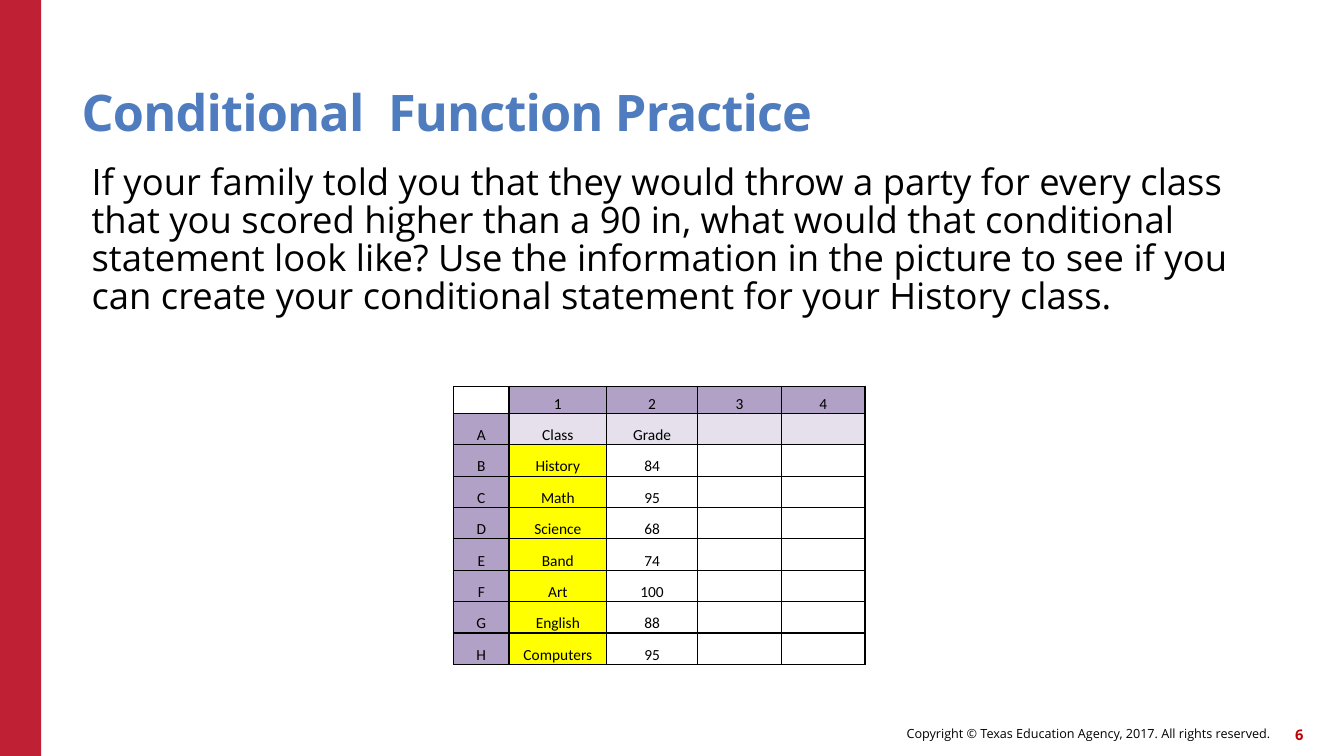
from dataclasses import dataclass

from lxml.etree import SubElement
from pptx import Presentation
from pptx.dml.color import RGBColor
from pptx.enum.shapes import MSO_SHAPE
from pptx.enum.text import MSO_ANCHOR, MSO_AUTO_SIZE, PP_ALIGN
from pptx.oxml import parse_xml
from pptx.oxml.ns import nsdecls, qn
from pptx.slide import Slide
from pptx.table import _Cell
from pptx.text.text import TextFrame
from pptx.util import Cm, Pt


@dataclass(frozen=True)
class Theme:
    font: str = "Open Sans"
    grid_font: str = "Calibri"
    black: str = "000000"
    red: str = "C02033"
    dark_red: str = "C00000"
    blue: str = "4E7CBE"
    purple: str = "B2A1C7"
    pale: str = "E5E0EC"
    yellow: str = "FFFF00"
    title: float = 36
    body: float = 26
    cell: float = 11
    number: float = 10.5
    note: float = 9


@dataclass(frozen=True)
class Box:
    left: float
    top: float
    width: float
    height: float

    def place(self) -> tuple[Cm, Cm, Cm, Cm]:
        return Cm(self.left), Cm(self.top), Cm(self.width), Cm(self.height)


@dataclass(frozen=True)
class Label:
    text: str
    box: Box
    size: float
    color: str = "000000"
    bold: bool = False
    align: PP_ALIGN = PP_ALIGN.RIGHT
    anchor: MSO_ANCHOR = MSO_ANCHOR.MIDDLE
    inset: tuple[float, float] = (0, 0)
    line: float = 1


THEME = Theme()
BAR = Box(0, 0, 1.04, 19.05)
TITLE = Box(2.06, 1.14, 27.94, 2.44)
GRID = Box(11.43, 9.73, 10.37, 6.99)
WIDTHS = (1.4, 2.46, 2.29, 2.11, 2.11)
HEAD, ROW = 0.69, 0.79
GRADES = (
    ("Class", "Grade"), ("History", "84"), ("Math", "95"),
    ("Science", "68"), ("Band", "74"), ("Art", "100"),
    ("English", "88"), ("Computers", "95"),
)
LABELS = (
    Label("If your family told you that they would throw a party for every class "
          "that you scored higher than a 90 in, what would that conditional "
          "statement look like? Use the information in the picture to see if you "
          "can create your conditional statement for your History class.",
          Box(2.06, 3.94, 30.71, 13.16), THEME.body, align=PP_ALIGN.LEFT,
          anchor=MSO_ANCHOR.TOP, inset=(0.25, 0.23), line=0.87),
    Label("Copyright © Texas Education Agency, 2017. All rights reserved.",
          Box(15.6, 18.08, 16.41, 0.81), THEME.note),
    Label("6", Box(31.78, 18.11, 1.07, 0.81), THEME.number, THEME.dark_red, True),
)


def write(frame: TextFrame, text: str, *, size: float, color: str = THEME.black,
          font: str = THEME.font, bold: bool = False,
          align: PP_ALIGN = PP_ALIGN.LEFT, line: float = 1,
          track: float = 0) -> None:
    para = frame.paragraphs[0]
    para.alignment = align
    para.line_spacing = line
    if not text:
        SubElement(para._p, qn("a:endParaRPr"), sz=str(int(size * 100)))
        return
    run = para.add_run()
    run.text = text
    run.font.name = font
    run.font.size = Pt(size)
    run.font.bold = bold
    run.font.color.rgb = RGBColor.from_string(color)
    if track:
        run._r.get_or_add_rPr().set("spc", str(round(track * 100)))


def inset(frame: TextFrame, side: float, top: float) -> None:
    frame.margin_left = frame.margin_right = Cm(side)
    frame.margin_top = frame.margin_bottom = Cm(top)


def add_bar(slide: Slide) -> None:
    bar = slide.shapes.add_shape(MSO_SHAPE.RECTANGLE, *BAR.place())
    bar.shadow.inherit = False
    bar.fill.solid()
    bar.fill.fore_color.rgb = RGBColor.from_string(THEME.red)
    bar.line.fill.background()


def add_title(slide: Slide) -> None:
    title = slide.shapes.title
    title.left, title.top, title.width, title.height = TITLE.place()
    frame = title.text_frame
    frame.auto_size = MSO_AUTO_SIZE.NONE
    frame.word_wrap = True
    frame.vertical_anchor = MSO_ANCHOR.BOTTOM
    inset(frame, 0, 0)
    write(frame, "Conditional  Function Practice", size=THEME.title,
          color=THEME.blue, bold=True, line=0.9, track=-0.6)


def add_label(slide: Slide, label: Label) -> None:
    frame = slide.shapes.add_textbox(*label.box.place()).text_frame
    frame.word_wrap = True
    frame.vertical_anchor = label.anchor
    inset(frame, *label.inset)
    write(frame, label.text, size=label.size, color=label.color,
          bold=label.bold, align=label.align, line=label.line)


def shade(row: int, col: int) -> str | None:
    """Return the fill of a cell, or None where it is clear."""
    if row == 0 or col == 0:
        return THEME.purple if row or col else None
    if row == 1:
        return THEME.pale
    return THEME.yellow if col == 1 else None


def edge(cell: _Cell) -> None:
    """Draw a thin black line on all four sides."""
    props = cell._tc.get_or_add_tcPr()
    for spot, side in enumerate(("lnL", "lnR", "lnT", "lnB")):
        props.insert(spot, parse_xml(
            f'<a:{side} {nsdecls("a")} w="{Pt(1)}"><a:solidFill>'
            f'<a:srgbClr val="{THEME.black}"/></a:solidFill></a:{side}>'))


def add_grid(slide: Slide) -> None:
    rows = [("", "1", "2", "3", "4")]
    rows += [(key, *pair, "", "") for key, pair in zip("ABCDEFGH", GRADES)]
    table = slide.shapes.add_table(len(rows), len(WIDTHS), *GRID.place()).table
    table.first_row = table.horz_banding = False
    for col, width in zip(table.columns, WIDTHS):
        col.width = Cm(width)
    for r, texts in enumerate(rows):
        table.rows[r].height = Cm(ROW if r else HEAD)
        for c, text in enumerate(texts):
            cell = table.cell(r, c)
            cell.vertical_anchor = MSO_ANCHOR.BOTTOM
            cell.margin_left = cell.margin_right = cell.margin_top = Cm(0.03)
            cell.margin_bottom = Cm(0)
            color = shade(r, c)
            if color:
                cell.fill.solid()
                cell.fill.fore_color.rgb = RGBColor.from_string(color)
            else:
                cell.fill.background()
            edge(cell)
            write(cell.text_frame, text, size=THEME.cell,
                  font=THEME.grid_font, align=PP_ALIGN.CENTER)


def main() -> None:
    deck = Presentation()
    deck.slide_width, deck.slide_height = Cm(33.87), Cm(19.05)
    slide = deck.slides.add_slide(deck.slide_layouts[5])
    add_bar(slide)
    add_title(slide)
    for label in LABELS:
        add_label(slide, label)
    add_grid(slide)
    deck.save("out.pptx")


if __name__ == "__main__":
    main()
